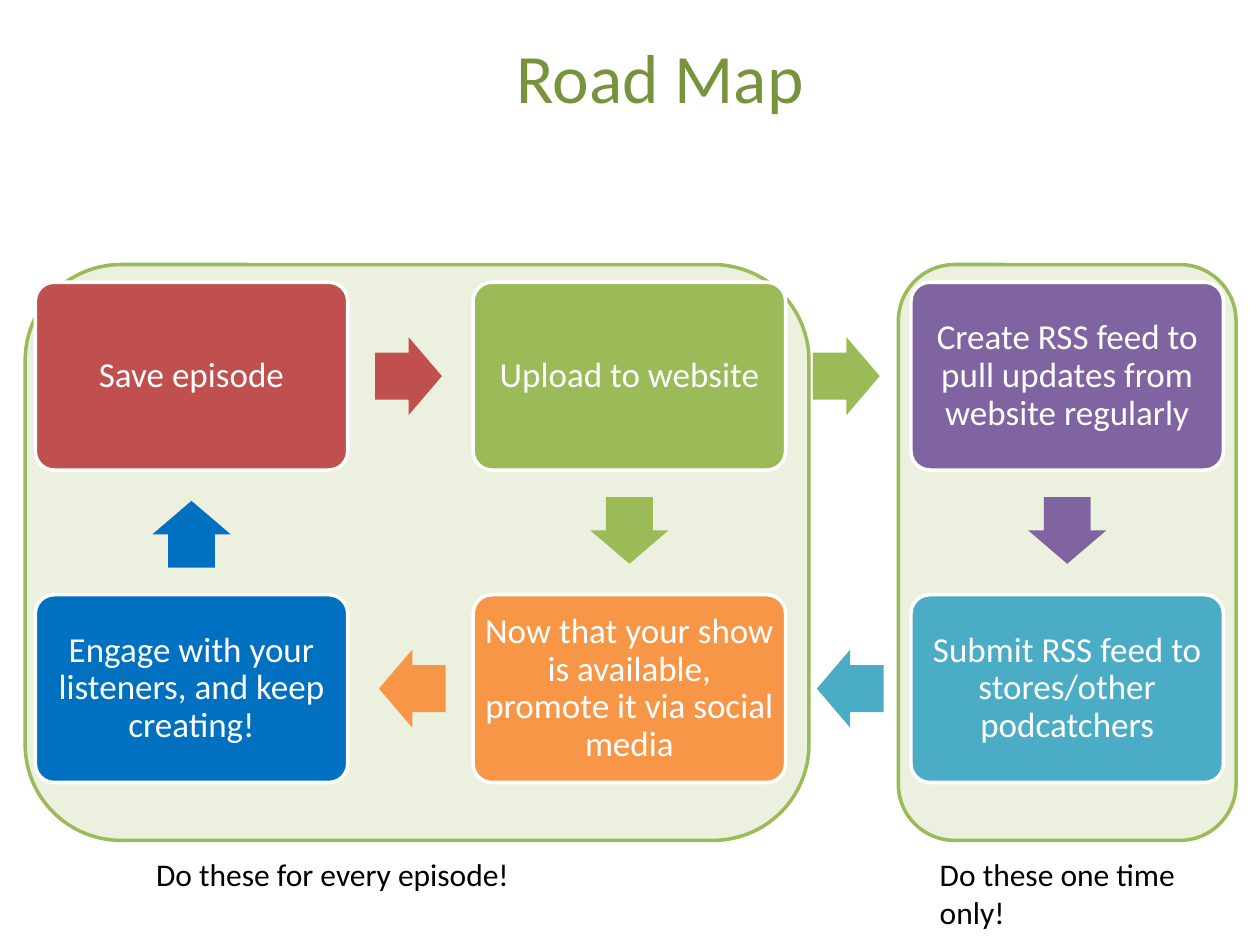
from dataclasses import dataclass
from math import atan2, cos, degrees, sin

from pptx import Presentation
from pptx.dml.color import RGBColor
from pptx.enum.shapes import MSO_SHAPE
from pptx.enum.text import MSO_ANCHOR, MSO_AUTO_SIZE, PP_ALIGN
from pptx.util import Inches, Pt


@dataclass(frozen=True)
class Theme:
    font: str = "Calibri"
    title: str = "77933C"
    panel: str = "EBF1DE"
    panel_line: str = "9BBB59"
    white: str = "FFFFFF"
    black: str = "000000"
    title_size: float = 39.6
    step_size: int = 20
    note_size: int = 18
    line_width: int = 2


THEME = Theme()
TITLE = "Road Map"

# name: (column, row, colour, text)
STEPS = {
    "save": (0, 0, "C0504D", "Save episode"),
    "upload": (1, 0, "9BBB59", "Upload to website"),
    "feed": (2, 0, "8064A2", "Create RSS feed to pull updates from website regularly"),
    "submit": (2, 1, "4BACC6", "Submit RSS feed to stores/other podcatchers"),
    "promote": (1, 1, "F79646", "Now that your show is available, promote it via social media"),
    "engage": (0, 1, "0070C0", "Engage with your listeners, and keep creating!"),
}
# Each arrow takes the colour of the step it leaves.
FLOWS = [
    ("save", "upload"), ("upload", "feed"), ("feed", "submit"),
    ("submit", "promote"), ("promote", "engage"),
    ("upload", "promote"), ("engage", "save"),
]
# (left, width) of each panel; (left, width, height, text) of each note
PANELS = [(7.13, 2.68), (0.2, 6.22)]
NOTES = [
    (1.14, 4.57, 0.4, "Do these for every episode!"),
    (7.36, 2.2, 0.71, "Do these one time only!"),
]

PANEL_TOP, PANEL_HEIGHT, NOTE_TOP = 2.1, 4.57, 6.74
GRID_LEFT, GRID_TOP = 0.28, 2.24
COLUMN_PITCH, ROW_PITCH = 3.475, 2.48
STEP_WIDTH, STEP_HEIGHT = 2.48, 1.49
ARROW_LENGTH, ARROW_BREADTH, ARROW_SETBACK = 0.53, 0.62, 0.015


def color(value):
    return RGBColor.from_string(value)


def style_font(para, size, value):
    para.font.name = THEME.font
    para.font.size = Pt(size)
    para.font.color.rgb = color(value)


def add_shape(page, kind, left, top, width, height, fill, line=None):
    shape = page.shapes.add_shape(
        kind, Inches(left), Inches(top), Inches(width), Inches(height))
    shape.shadow.inherit = False
    shape.fill.solid()
    shape.fill.fore_color.rgb = color(fill)
    if line:
        shape.line.color.rgb = color(line)
        shape.line.width = Pt(THEME.line_width)
    else:
        shape.line.fill.background()
    return shape


def step_center(name):
    column, row = STEPS[name][:2]
    return (GRID_LEFT + column * COLUMN_PITCH + STEP_WIDTH / 2,
            GRID_TOP + row * ROW_PITCH + STEP_HEIGHT / 2)


def add_step(page, name):
    fill, text = STEPS[name][2:]
    x, y = step_center(name)
    box = add_shape(page, MSO_SHAPE.ROUNDED_RECTANGLE, x - STEP_WIDTH / 2,
                    y - STEP_HEIGHT / 2, STEP_WIDTH, STEP_HEIGHT, fill, THEME.white)
    box.adjustments[0] = 0.1
    frame = box.text_frame
    frame.word_wrap = True
    frame.vertical_anchor = MSO_ANCHOR.MIDDLE
    frame.margin_left = frame.margin_right = Inches(0.04)
    frame.margin_top = frame.margin_bottom = Inches(0.04)
    para = frame.paragraphs[0]
    para.text = text
    para.alignment = PP_ALIGN.CENTER
    para.line_spacing = 0.9
    style_font(para, THEME.step_size, THEME.white)


def add_flow(page, start, end):
    """Place an arrow midway between two steps, set slightly back to its start."""
    (x1, y1), (x2, y2) = step_center(start), step_center(end)
    angle = atan2(y2 - y1, x2 - x1)
    x = (x1 + x2) / 2 - ARROW_SETBACK * cos(angle)
    y = (y1 + y2) / 2 - ARROW_SETBACK * sin(angle)
    arrow = add_shape(page, MSO_SHAPE.RIGHT_ARROW, x - ARROW_LENGTH / 2,
                      y - ARROW_BREADTH / 2, ARROW_LENGTH, ARROW_BREADTH, STEPS[start][2])
    arrow.adjustments[0] = 0.6
    arrow.adjustments[1] = 0.5
    arrow.rotation = degrees(angle) % 360


def add_note(page, left, width, height, text):
    note = page.shapes.add_textbox(
        Inches(left), Inches(NOTE_TOP), Inches(width), Inches(height))
    note.text_frame.word_wrap = True
    note.text_frame.auto_size = MSO_AUTO_SIZE.SHAPE_TO_FIT_TEXT
    para = note.text_frame.paragraphs[0]
    para.text = text
    style_font(para, THEME.note_size, THEME.black)


def set_title(page):
    title = page.shapes.title
    title.left, title.top = Inches(0.98), Inches(0.21)
    title.width, title.height = Inches(8.52), Inches(0.79)
    title.text_frame.vertical_anchor = MSO_ANCHOR.MIDDLE
    para = title.text_frame.paragraphs[0]
    para.text = TITLE
    para.alignment = PP_ALIGN.CENTER
    style_font(para, THEME.title_size, THEME.title)


def main():
    deck = Presentation()
    deck.slide_width, deck.slide_height = Inches(10), Inches(7.5)
    page = deck.slides.add_slide(deck.slide_layouts.get_by_name("Title Only"))
    set_title(page)
    for left, width in PANELS:
        add_shape(page, MSO_SHAPE.ROUNDED_RECTANGLE, left, PANEL_TOP, width,
                  PANEL_HEIGHT, THEME.panel, THEME.panel_line)
    for name in STEPS:
        add_step(page, name)
    for start, end in FLOWS:
        add_flow(page, start, end)
    for note in NOTES:
        add_note(page, *note)
    deck.save("out.pptx")


if __name__ == "__main__":
    main()
